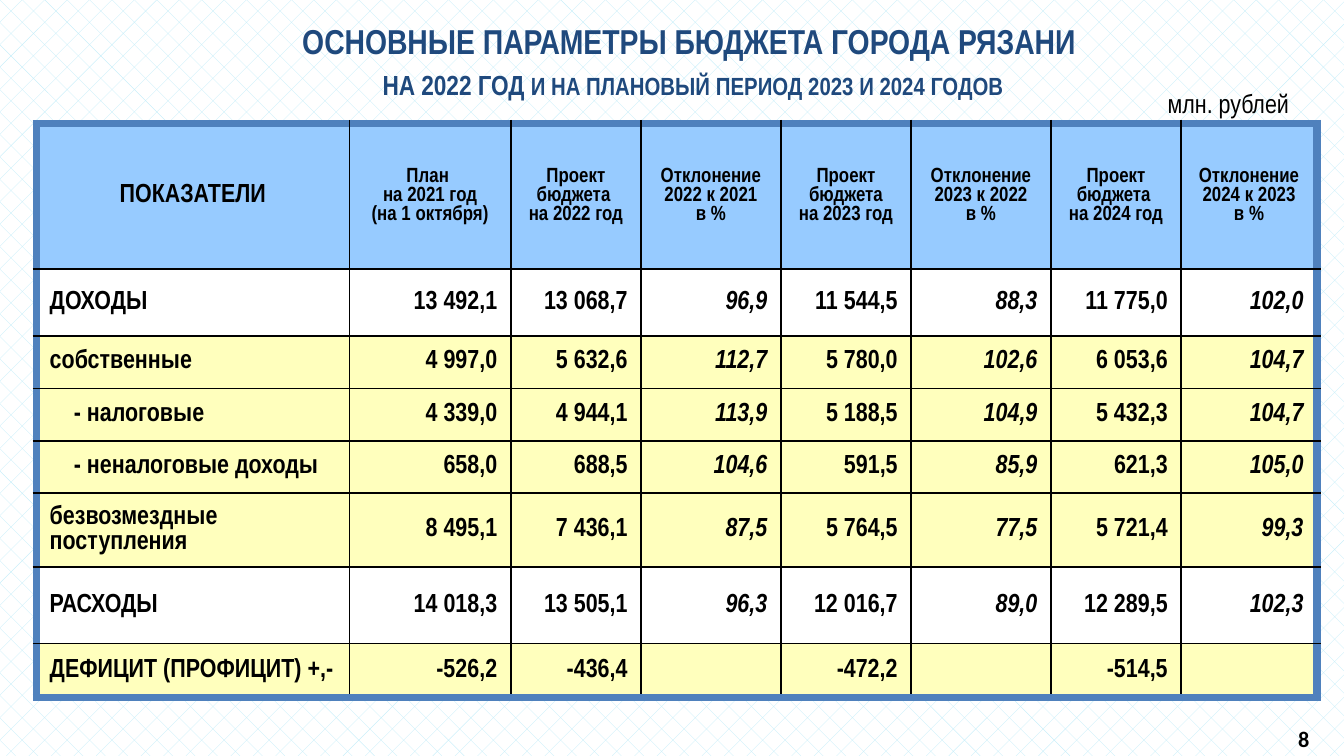
from typing import NamedTuple

from lxml import etree
from pptx import Presentation
from pptx.dml.color import RGBColor
from pptx.enum.dml import MSO_PATTERN
from pptx.enum.text import MSO_ANCHOR, PP_ALIGN
from pptx.oxml.ns import qn
from pptx.util import Inches, Pt

LEFT, CENTER, RIGHT = PP_ALIGN.LEFT, PP_ALIGN.CENTER, PP_ALIGN.RIGHT
TOP, MIDDLE = MSO_ANCHOR.TOP, MSO_ANCHOR.MIDDLE
DIAGONAL_BRICK = MSO_PATTERN.DIAGONAL_BRICK

BLACK = RGBColor(0x00, 0x00, 0x00)
WHITE = RGBColor(0xFF, 0xFF, 0xFF)
NAVY = RGBColor(0x1F, 0x49, 0x7D)
FRAME_BLUE = RGBColor(0x4F, 0x81, 0xBD)
HEADER_BLUE = RGBColor(0x97, 0xCB, 0xFF)
YELLOW = RGBColor(0xFF, 0xFF, 0xBD)
PATTERN_BLUE = RGBColor(0xBD, 0xEC, 0xF9)
NARROW = "Arial Narrow"


class Span(NamedTuple):
    text: str
    size: float
    font: str = NARROW
    color: RGBColor = BLACK
    bold: bool = True
    small_caps: bool = False


class Label(NamedTuple):
    left: float
    top: float
    width: float
    height: float
    lines: list[list[Span]]
    anchor: MSO_ANCHOR = MIDDLE


class BudgetRow(NamedTuple):
    name: str
    values: list[str]
    height: float
    fill: RGBColor = YELLOW
    indent: float = 0


COLUMN_WIDTHS = [2.33, 1.2, 0.97, 1.04, 0.97, 1.04, 0.97, 1.01]
HEADER_HEIGHT = 1.08
HEADERS = [
    "ПОКАЗАТЕЛИ",
    "План \nна 2021 год\n(на 1 октября)",
    "Проект бюджета \nна 2022 год",
    "Отклонение\n2022 к 2021\nв %",
    "Проект бюджета\nна 2023 год",
    "Отклонение\n2023 к 2022\nв %",
    "Проект бюджета \nна 2024 год",
    "Отклонение\n2024 к 2023\nв %",
]
ROWS = [
    BudgetRow("ДОХОДЫ", ["13 492,1", "13 068,7", "96,9", "11 544,5", "88,3", "11 775,0", "102,0"], 0.5, WHITE),
    BudgetRow("собственные", ["4 997,0", "5 632,6", "112,7", "5 780,0", "102,6", "6 053,6", "104,7"], 0.39),
    BudgetRow("- налоговые", ["4 339,0", "4 944,1", "113,9", "5 188,5", "104,9", "5 432,3", "104,7"], 0.39, indent=0.18),
    BudgetRow("- неналоговые доходы", ["658,0", "688,5", "104,6", "591,5", "85,9", "621,3", "105,0"], 0.39, indent=0.18),
    BudgetRow("безвозмездные поступления", ["8 495,1", "7 436,1", "87,5", "5 764,5", "77,5", "5 721,4", "99,3"], 0.55),
    BudgetRow("РАСХОДЫ", ["14 018,3", "13 505,1", "96,3", "12 016,7", "89,0", "12 289,5", "102,3"], 0.57, WHITE),
    BudgetRow("ДЕФИЦИТ (ПРОФИЦИТ) +,-", ["-526,2", "-436,4", "", "-472,2", "", "-514,5", ""], 0.4),
]
LABELS = [
    Label(8.47, 0.61, 1.34, 0.31, [[Span("млн. рублей", 14, bold=False)]]),
    Label(0.27, 0.14, 9.77, 0.63, [
        [Span("ОСНОВНЫЕ ПАРАМЕТРЫ БЮДЖЕТА ГОРОДА РЯЗАНИ ", 18.5, color=NAVY)],
        [Span("на 2022 год ", 18.5, color=NAVY, small_caps=True),
         Span("и на плановый период 2023 и 2024 годов", 16.6, color=NAVY, small_caps=True)],
    ]),
    Label(9.44, 5.35, 0.52, 0.26, [[Span("8", 11.9, "Calibri")]], TOP),
]


def format_run(r, span: Span) -> None:
    r.font.size = Pt(span.size)
    r.font.name = span.font
    r.font.bold = span.bold
    r.font.color.rgb = span.color
    if span.small_caps:
        r.font._element.set("cap", "small")


def add_label(s, label: Label) -> None:
    box = s.shapes.add_textbox(Inches(label.left), Inches(label.top), Inches(label.width), Inches(label.height))
    tf = box.text_frame
    tf.word_wrap = True
    tf.vertical_anchor = label.anchor
    p = tf.paragraphs[0]
    p.alignment = CENTER
    for i, line in enumerate(label.lines):
        if i:
            p.add_line_break()
        for span in line:
            r = p.add_run()
            r.text = span.text
            format_run(r, span)


def set_borders(cell, framed_sides: dict[str, bool]) -> None:
    tc_pr = cell._tc.get_or_add_tcPr()
    for side, framed in framed_sides.items():
        ln = etree.SubElement(tc_pr, qn(f"a:ln{side}"), w=str(Pt(4.5 if framed else 1)))
        fill = etree.SubElement(ln, qn("a:solidFill"))
        etree.SubElement(fill, qn("a:srgbClr"), val=str(FRAME_BLUE if framed else BLACK))


def fill_cell(cell, text: str, size: float, align: PP_ALIGN, fill: RGBColor,
              italic: bool = False, indent: float = 0) -> None:
    cell.fill.solid()
    cell.fill.fore_color.rgb = fill
    cell.vertical_anchor = MIDDLE
    cell.margin_left = Inches(0.1 + indent)
    cell.margin_right = Inches(0.1)
    cell.margin_top = cell.margin_bottom = Inches(0.04)
    cell.text_frame.text = text
    for p in cell.text_frame.paragraphs:
        p.alignment = align
        for r in p.runs:
            format_run(r, Span(r.text, size))
            r.font.italic = italic


def add_budget_table(s) -> None:
    heights = [HEADER_HEIGHT] + [row.height for row in ROWS]
    n_rows, n_cols = len(heights), len(COLUMN_WIDTHS)
    table = s.shapes.add_table(n_rows, n_cols, Inches(0.27), Inches(0.92),
                               Inches(sum(COLUMN_WIDTHS)), Inches(sum(heights))).table
    table.first_row = table.horz_banding = False
    for column, width in zip(table.columns, COLUMN_WIDTHS):
        column.width = Inches(width)
    for table_row, height in zip(table.rows, heights):
        table_row.height = Inches(height)
    for i in range(n_rows):
        for j in range(n_cols):
            set_borders(table.cell(i, j), {"L": j == 0, "R": j == n_cols - 1, "T": i == 0, "B": i == n_rows - 1})
    for j, header in enumerate(HEADERS):
        fill_cell(table.cell(0, j), header, 11 if j else 14, CENTER, HEADER_BLUE)
    for i, row in enumerate(ROWS, 1):
        fill_cell(table.cell(i, 0), row.name, 14, LEFT, row.fill, indent=row.indent)
        for j, value in enumerate(row.values, 1):
            is_deviation = HEADERS[j].startswith("Отклонение")
            fill_cell(table.cell(i, j), value, 14, RIGHT, row.fill, italic=is_deviation)


def main() -> None:
    """Build the slide with the main parameters of the city budget."""
    prs = Presentation()
    prs.slide_width = Inches(10)
    prs.slide_height = prs.slide_width * 9 // 16
    s = prs.slides.add_slide(prs.slide_layouts[6])
    background = s.background.fill
    background.patterned()
    background.pattern = DIAGONAL_BRICK
    background.fore_color.rgb = PATTERN_BLUE
    background.back_color.rgb = WHITE
    add_budget_table(s)
    for label in LABELS:
        add_label(s, label)
    prs.save("out.pptx")


if __name__ == "__main__":
    main()
